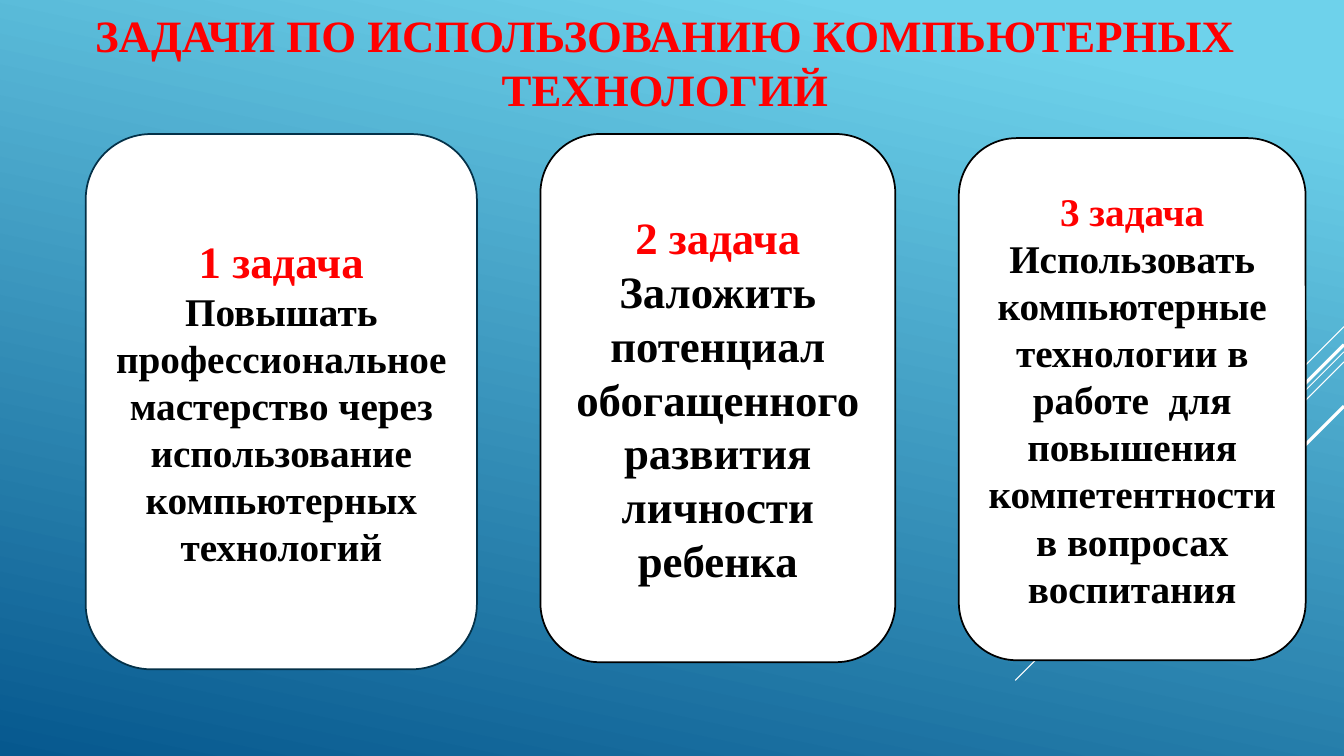
import pptx
import pptx.util
import pptx.dml.color
import pptx.enum.shapes
import pptx.enum.text
import pptx.oxml.ns
import lxml.etree

Inches = pptx.util.Inches
Pt = pptx.util.Pt
RGBColor = pptx.dml.color.RGBColor
ANCHOR = pptx.enum.text.MSO_ANCHOR

SKY = RGBColor(0x6E, 0xD2, 0xEB)
DEEP = RGBColor(0x06, 0x58, 0x8E)
NAVY = RGBColor(0x04, 0x31, 0x48)
RED = RGBColor(0xFF, 0, 0)
BLACK = RGBColor(0, 0, 0)
WHITE = RGBColor(0xFF, 0xFF, 0xFF)

WIDE, HIGH = 13.33, 7.5
FONT = {"name": "Times New Roman", "bold": True}

TITLE = "ЗАДАЧИ ПО ИСПОЛЬЗОВАНИЮ КОМПЬЮТЕРНЫХ ТЕХНОЛОГИЙ"

# Start height at the right edge, horizontal run, line width
RAYS = [
    (3.24, 1.0, 0.75),
    (3.49, 3.26, 0.75),
    (3.59, 2.07, 0.75),
    (3.42, 1.91, 2.25),
    (4.03, 1.39, 2.25),
]

# Box, outline, heading and its size, body and its size
CARDS = [
    ((0.85, 1.33, 3.88, 5.31), NAVY, "1 задача", 32,
     "Повышать профессиональное мастерство через использование "
     "компьютерных технологий", 28),
    ((5.36, 1.33, 3.52, 5.24), BLACK, "2 задача", 32,
     "Заложить потенциал обогащенного развития личности ребенка", 32),
    ((9.51, 1.37, 3.44, 5.18), BLACK, "3 задача", 28,
     "Использовать компьютерные технологии в работе  для повышения "
     "компетентности в вопросах воспитания", 28),
]


def style(item, form):
    for key, value in form.items():
        setattr(item, key, value)


def write(frame, parts, anchor):
    """Fill a text frame with one centred paragraph per part."""
    style(frame, {"word_wrap": True, "vertical_anchor": anchor})
    for i, (text, size, color) in enumerate(parts):
        para = frame.add_paragraph() if i else frame.paragraphs[0]
        para.alignment = pptx.enum.text.PP_ALIGN.CENTER
        run = para.add_run()
        run.text = text
        style(run.font, {**FONT, "size": Pt(size)})
        run.font.color.rgb = color


def backdrop(slide):
    fill = slide.background.fill
    fill.gradient()
    fill.gradient_angle = 360 - 102
    for stop, place, color in zip(fill.gradient_stops, (0.1, 1), (SKY, DEEP)):
        stop.position = place
        stop.color.rgb = color


def rays(slide, right):
    """Draw diagonals that fall to the left from the right edge."""
    for top, run, width in RAYS:
        ray = slide.shapes.add_connector(
            pptx.enum.shapes.MSO_CONNECTOR.STRAIGHT,
            Inches(right), Inches(top), Inches(right - run), Inches(top + run))
        ray.line.color.rgb = WHITE
        ray.line.width = Pt(width)
        lxml.etree.SubElement(ray._element.spPr,
                              pptx.oxml.ns.qn("a:effectLst"))


def title(slide, box):
    area = slide.shapes.add_textbox(*map(Inches, box))
    write(area.text_frame, [(TITLE, 32, RED)], ANCHOR.BOTTOM)


def card(slide, box, edge, head, big, body, size):
    shape = slide.shapes.add_shape(
        pptx.enum.shapes.MSO_SHAPE.ROUNDED_RECTANGLE, *map(Inches, box))
    shape.shadow.inherit = False
    shape.fill.solid()
    shape.fill.fore_color.rgb = WHITE
    shape.line.color.rgb = edge
    shape.line.width = Pt(1.25)
    write(shape.text_frame, [(head, big, RED), (body, size, BLACK)],
          ANCHOR.MIDDLE)


def main():
    deck = pptx.Presentation()
    style(deck, {"slide_width": Inches(WIDE), "slide_height": Inches(HIGH)})
    slide = deck.slides.add_slide(deck.slide_layouts[6])
    backdrop(slide)
    rays(slide, WIDE)
    title(slide, (0.75, 0, 11.69, 1.19))
    for entry in CARDS:
        card(slide, *entry)
    deck.save("out.pptx")


if __name__ == "__main__":
    main()
